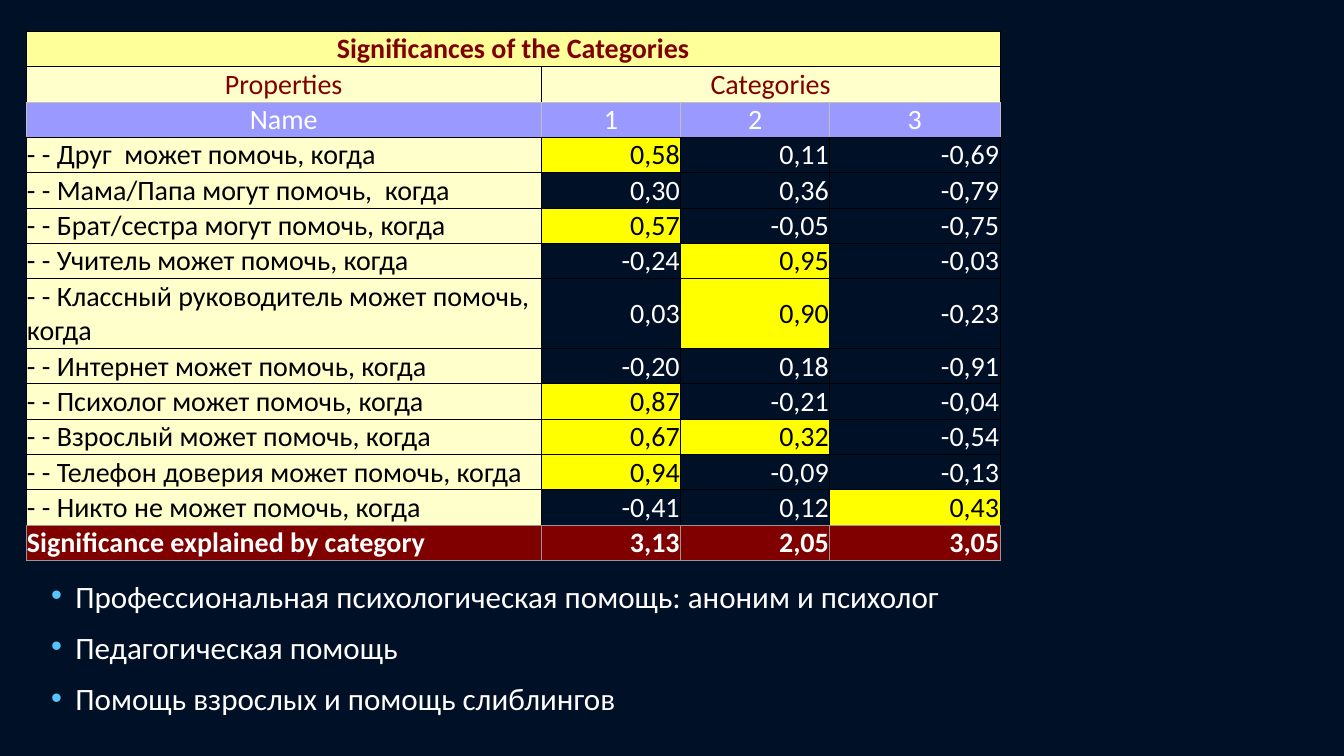
from dataclasses import dataclass

from lxml import etree
from pptx import Presentation
from pptx.dml.color import RGBColor
from pptx.enum import text as t
from pptx.oxml import ns
from pptx.util import Cm, Pt


@dataclass(frozen=True)
class Theme:
    font: str = "Calibri"
    table_size: float = 20
    bullet_size: float = 22.2
    background: str = "001027"
    light: str = "FFFFFF"
    dark: str = "000000"
    maroon: str = "800000"
    title_fill: str = "FFFF99"
    label_fill: str = "FFFFCC"
    name_fill: str = "9999FF"
    highlight: str = "FFFF00"
    silver: str = "C0C0C0"
    grey: str = "969696"
    bullet: str = "56C5FF"


THEME = Theme()
CENTER, LEFT, RIGHT = t.PP_ALIGN.CENTER, t.PP_ALIGN.LEFT, t.PP_ALIGN.RIGHT

COLUMN_WIDTHS = (12.98, 3.51, 3.76, 4.29)
ROW_HEIGHT, TALL_ROW_HEIGHT = 0.89, 1.76
TALL_ROW = 7

# Property, significance in each category, highlighted categories
PROPERTIES = [
    ("- - Друг  может помочь, когда", ("0,58", "0,11", "-0,69"), {1}),
    ("- - Мама/Папа могут помочь,  когда", ("0,30", "0,36", "-0,79"), set()),
    ("- - Брат/сестра могут помочь, когда", ("0,57", "-0,05", "-0,75"), {1}),
    ("- - Учитель может помочь, когда", ("-0,24", "0,95", "-0,03"), {2}),
    ("- - Классный руководитель может помочь, когда", ("0,03", "0,90", "-0,23"), {2}),
    ("- - Интернет может помочь, когда", ("-0,20", "0,18", "-0,91"), set()),
    ("- - Психолог может помочь, когда", ("0,87", "-0,21", "-0,04"), {1}),
    ("- - Взрослый может помочь, когда", ("0,67", "0,32", "-0,54"), {1, 2}),
    ("- - Телефон доверия может помочь, когда", ("0,94", "-0,09", "-0,13"), {1}),
    ("- - Никто не может помочь, когда", ("-0,41", "0,12", "0,43"), {3}),
]
CONCLUSIONS = [
    "Профессиональная психологическая помощь: аноним и психолог",
    "Педагогическая помощь",
    "Помощь взрослых и помощь слиблингов",
]


def style_text(paragraph, size, color, bold=False):
    for run in paragraph.runs:
        run.font.name = THEME.font
        run.font.size = Pt(size)
        run.font.bold = bold
        run.font.color.rgb = RGBColor.from_string(color)


def set_borders(cell, edge, bottom):
    properties = cell._tc.get_or_add_tcPr()
    for side, color in (("L", edge), ("R", edge), ("T", edge), ("B", bottom)):
        line = etree.SubElement(properties, ns.qn(f"a:ln{side}"), w=str(Pt(0.5)))
        fill = etree.SubElement(line, ns.qn("a:solidFill"))
        etree.SubElement(fill, ns.qn("a:srgbClr"), val=color)


def fill_cell(cell, words, color, fill=None, align=RIGHT, bold=False,
              edge=THEME.dark, bottom=THEME.dark):
    set_borders(cell, edge, bottom)
    if fill:
        cell.fill.solid()
        cell.fill.fore_color.rgb = RGBColor.from_string(fill)
    else:
        cell.fill.background()
    cell.margin_left = cell.margin_right = cell.margin_top = Cm(0.02)
    cell.margin_bottom = 0
    cell.vertical_anchor = t.MSO_ANCHOR.MIDDLE
    cell.text_frame.text = words
    paragraph = cell.text_frame.paragraphs[0]
    paragraph.alignment = align
    style_text(paragraph, THEME.table_size, color, bold)


def fill_header(table):
    headings = [
        (("Significances of the Categories", "", "", ""),
         dict(color=THEME.maroon, fill=THEME.title_fill, bold=True)),
        (("Properties", "Categories", "", ""),
         dict(color=THEME.maroon, fill=THEME.label_fill, bottom=THEME.silver)),
        (("Name", "1", "2", "3"),
         dict(color=THEME.light, fill=THEME.name_fill, edge=THEME.silver)),
    ]
    for row, (words, style) in enumerate(headings):
        for column, word in enumerate(words):
            fill_cell(table.cell(row, column), word, align=CENTER, **style)
    table.cell(0, 0).merge(table.cell(0, 3))
    table.cell(1, 1).merge(table.cell(1, 3))


def fill_properties(table, first_row):
    for row, (name, values, highlighted) in enumerate(PROPERTIES, first_row):
        is_last = row == first_row + len(PROPERTIES) - 1
        bottom = THEME.grey if is_last else THEME.dark
        fill_cell(table.cell(row, 0), name, THEME.dark, THEME.label_fill, LEFT, bottom=bottom)
        for column, value in enumerate(values, 1):
            color, fill = ((THEME.dark, THEME.highlight) if column in highlighted
                           else (THEME.light, None))
            fill_cell(table.cell(row, column), value, color, fill, bottom=bottom)


def fill_total(table, row):
    words = ("Significance explained by category", "3,13", "2,05", "3,05")
    for column, word in enumerate(words):
        fill_cell(table.cell(row, column), word, THEME.light, THEME.maroon,
                  RIGHT if column else LEFT, True, THEME.grey, THEME.grey)


def add_significance_table(slide, left, top):
    row_count = len(PROPERTIES) + 4
    height = ROW_HEIGHT * (row_count - 1) + TALL_ROW_HEIGHT
    table = slide.shapes.add_table(row_count, len(COLUMN_WIDTHS), Cm(left), Cm(top),
                                   Cm(sum(COLUMN_WIDTHS)), Cm(height)).table
    table.first_row = table.horz_banding = False
    for column, width in zip(table.columns, COLUMN_WIDTHS):
        column.width = Cm(width)
    for index, row in enumerate(table.rows):
        row.height = Cm(TALL_ROW_HEIGHT if index == TALL_ROW else ROW_HEIGHT)
    fill_header(table)
    fill_properties(table, 3)
    fill_total(table, row_count - 1)


def add_bullet(paragraph):
    properties = paragraph._p.get_or_add_pPr()
    properties.set("marL", str(Cm(0.61)))
    properties.set("indent", str(-Cm(0.61)))
    color = etree.SubElement(properties, ns.qn("a:buClr"))
    etree.SubElement(color, ns.qn("a:srgbClr"), val=THEME.bullet)
    etree.SubElement(properties, ns.qn("a:buFont"), typeface="Arial")
    etree.SubElement(properties, ns.qn("a:buChar"), char="•")


def add_conclusions(slide, left, top, width, height):
    box = slide.shapes.add_textbox(Cm(left), Cm(top), Cm(width), Cm(height))
    frame = box.text_frame
    frame.word_wrap = True
    frame.text = "\n".join(CONCLUSIONS)
    for index, paragraph in enumerate(frame.paragraphs):
        add_bullet(paragraph)
        paragraph.line_spacing = 0.7
        if index:
            paragraph.space_before = Pt(18)
        style_text(paragraph, THEME.bullet_size, THEME.light)


def main():
    presentation = Presentation()
    presentation.slide_width, presentation.slide_height = Cm(33.87), Cm(19.05)
    slide = presentation.slides.add_slide(presentation.slide_layouts.get_by_name("Blank"))
    slide.background.fill.solid()
    slide.background.fill.fore_color.rgb = RGBColor.from_string(THEME.background)
    add_significance_table(slide, 0.66, 0.79)
    add_conclusions(slide, 1.04, 14.68, 28.98, 3.63)
    presentation.save("out.pptx")


if __name__ == "__main__":
    main()
